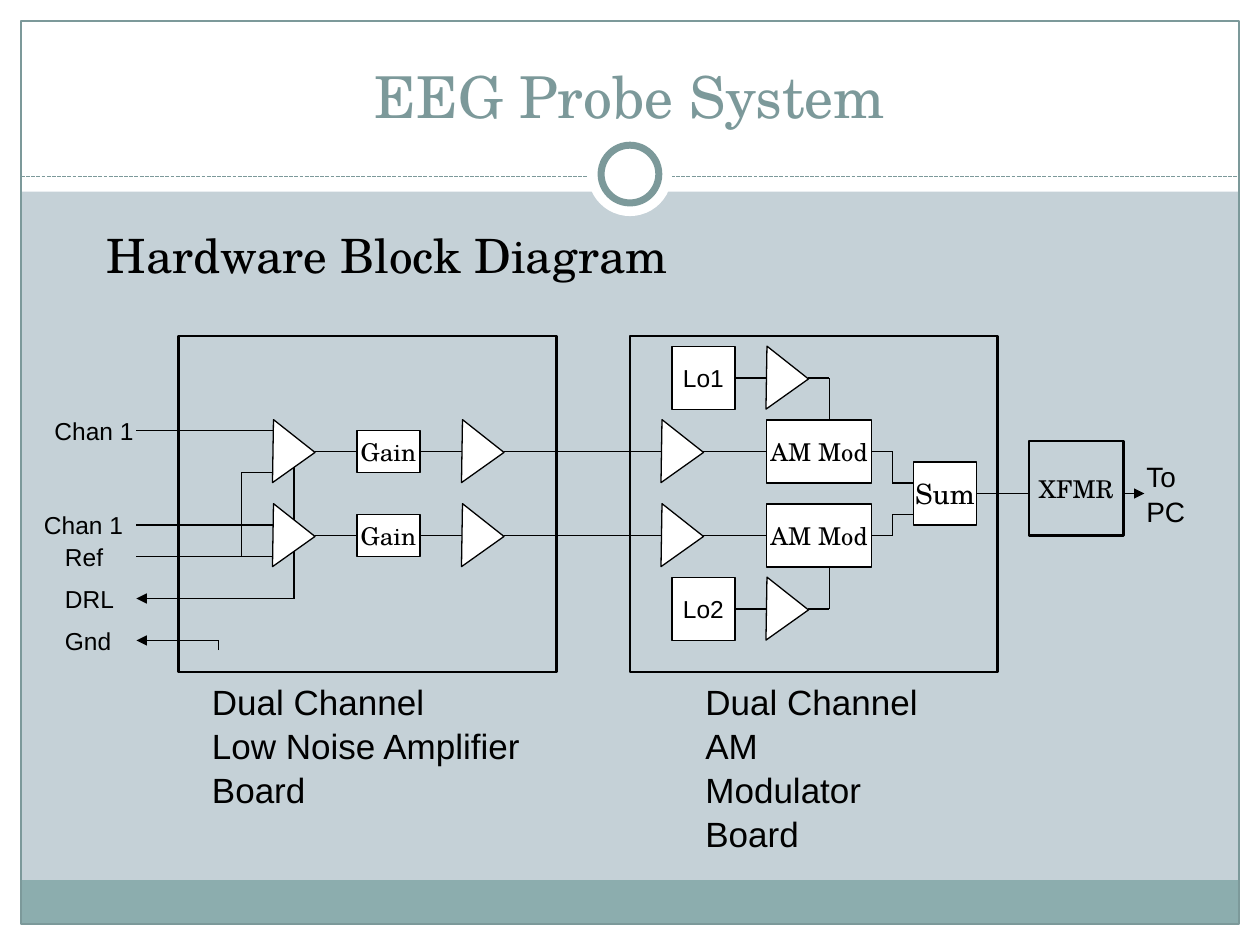
from itertools import pairwise

from lxml import etree
from pptx import Presentation
from pptx.dml.color import RGBColor
from pptx.enum.dml import MSO_LINE
from pptx.enum.shapes import MSO_CONNECTOR, MSO_SHAPE
from pptx.enum.text import MSO_ANCHOR, PP_ALIGN
from pptx.oxml.ns import qn
from pptx.util import Pt

RECTANGLE, OVAL, TRIANGLE = MSO_SHAPE.RECTANGLE, MSO_SHAPE.OVAL, MSO_SHAPE.ISOSCELES_TRIANGLE
STRAIGHT, DASH = MSO_CONNECTOR.STRAIGHT, MSO_LINE.SQUARE_DOT
TOP, MIDDLE, BOTTOM = MSO_ANCHOR.TOP, MSO_ANCHOR.MIDDLE, MSO_ANCHOR.BOTTOM
LEFT, CENTER = PP_ALIGN.LEFT, PP_ALIGN.CENTER
LEFT_SIDE, RIGHT_SIDE = 1, 3
SERIF, SANS = "TeX Gyre Schola", "Arial"
COLORS = {
    "background": "C5D1D7",
    "white": "FFFFFF",
    "black": "000000",
    "footer": "8CADAE",
    "accent": "7C999A",
    "bullet": "D16349",
}
CHANNEL_ROWS = (258, 306)


def color(name):
    """Return the named colour."""
    return RGBColor.from_string(COLORS[name])


def add_block(slide, kind, box, fill=None, line=None, width=0.75):
    """Add a preset shape with an optional fill and outline."""
    shape = slide.shapes.add_shape(kind, *map(Pt, box))
    shape.shadow.inherit = False
    if fill:
        shape.fill.solid()
        shape.fill.fore_color.rgb = color(fill)
    else:
        shape.fill.background()
    if line:
        shape.line.color.rgb = color(line)
        shape.line.width = Pt(width)
    else:
        shape.line.fill.background()
    return shape


def write(shape, lines, size, font, ink="black", align=CENTER, anchor=MIDDLE, wrap=False):
    """Fill a shape with one paragraph for each line."""
    frame = shape.text_frame
    frame.word_wrap = wrap
    frame.vertical_anchor = anchor
    frame.text = "\n".join(lines)
    for paragraph in frame.paragraphs:
        paragraph.alignment = align
        paragraph.font.size = Pt(size)
        paragraph.font.name = font
        paragraph.font.color.rgb = color(ink)
    return frame


def add_labelled(slide, box, label, size=14, font=SERIF, fill="white", width=0.75):
    """Add an outlined rectangle with a centred label."""
    shape = add_block(slide, RECTANGLE, box, fill, "black", width)
    write(shape, [label], size, font)
    return shape


def add_caption(slide, box, lines, size, spacing=None):
    """Add a left-aligned caption."""
    text_box = slide.shapes.add_textbox(*map(Pt, box))
    frame = write(text_box, lines, size, SANS, align=LEFT, anchor=TOP, wrap=True)
    frame.margin_right = 0
    for paragraph in frame.paragraphs:
        paragraph.line_spacing = spacing


def add_amplifier(slide, center_x, center_y):
    """Add a triangle pointing right around a centre."""
    shape = add_block(slide, TRIANGLE, (center_x - 18, center_y - 12, 36, 24), "white", "black")
    shape.adjustments[0] = 0.51
    shape.rotation = 90.9


def add_line(slide, start, end, ink="black"):
    """Add a thin straight connector."""
    line = slide.shapes.add_connector(STRAIGHT, *map(Pt, (*start, *end)))
    line.line.color.rgb = color(ink)
    line.line.width = Pt(0.75)
    etree.SubElement(line._element.spPr, qn("a:effectLst"))
    return line


def add_wire(slide, *points, begin=None, end=None, arrow=False):
    """Run connectors through the points and join the ends to blocks."""
    lines = [add_line(slide, first, second) for first, second in pairwise(points)]
    if begin:
        lines[0].begin_connect(begin, RIGHT_SIDE)
    if end:
        lines[-1].end_connect(end, LEFT_SIDE)
    if arrow:
        outline = lines[-1].line._get_or_add_ln()
        etree.SubElement(outline, qn("a:tailEnd"), type="triangle")


def add_frame(slide):
    """Draw the margins, header, footer band and ring."""
    for box in ((0, 528, 720, 12), (0, 0, 720, 109.5), (0, 0, 12, 540), (708, 0, 12, 540)):
        add_block(slide, RECTANGLE, box, "white")
    add_block(slide, RECTANGLE, (12, 503, 696, 25), "footer")
    add_block(slide, RECTANGLE, (12, 12, 696, 516), line="accent")
    add_line(slide, (12, 100.8), (708, 100.8), "accent").line.dash_style = DASH
    add_block(slide, OVAL, (336, 75.5, 48, 48), "white")
    add_block(slide, OVAL, (343.5, 83, 33, 33), "white", "accent", 4)


def add_headings(slide):
    """Write the title and the bulleted heading."""
    title = slide.shapes.add_textbox(*map(Pt, (24, 18, 672, 60)))
    write(title, ["EEG Probe System"], 33, SERIF, "accent", anchor=BOTTOM, wrap=True)
    heading = slide.shapes.add_textbox(*map(Pt, (54, 126, 612, 48)))
    properties = heading.text_frame.paragraphs[0]._p.get_or_add_pPr()
    properties.set("marL", str(Pt(21.6)))
    properties.set("indent", str(Pt(-21.6)))
    bullet_color = etree.SubElement(properties, qn("a:buClr"))
    etree.SubElement(bullet_color, qn("a:srgbClr"), val=COLORS["bullet"])
    etree.SubElement(properties, qn("a:buSzPct"), val="85000")
    etree.SubElement(properties, qn("a:buChar"), char="●")
    write(heading, ["Hardware Block Diagram"], 27, SERIF, align=LEFT, anchor=TOP, wrap=True)


def add_amplifier_board(slide):
    """Draw the low noise amplifier board and its inputs."""
    add_block(slide, RECTANGLE, (102, 192, 216, 192), line="black", width=1.5)
    for row in CHANNEL_ROWS:
        for center_x in (168, 276):
            add_amplifier(slide, center_x, row)
        add_wire(slide, (180, row), (264, row))
        add_labelled(slide, (204, row - 12, 36, 24), "Gain")
    for row in (246, 300, 318):
        add_wire(slide, (78, row), (156, row))
    add_wire(slide, (138, 318), (138, 270), (156, 270))
    add_wire(slide, (168, 267), (168, 297))
    add_wire(slide, (168, 315), (168, 342), (78, 342), arrow=True)
    add_wire(slide, (125, 371.5), (125, 366), (78, 366), arrow=True)
    for left, top, label in ((24, 234, "Chan 1"), (18, 288, "Chan 1"), (30, 306, "Ref"),
                             (30, 330, "DRL"), (30, 354, "Gnd")):
        add_caption(slide, (left, top, 60, 24), [label], 14)
    add_caption(slide, (114, 384, 192, 79), ["Dual Channel", "Low Noise Amplifier", "Board"], 20, 1.05)


def add_modulator_board(slide):
    """Draw the modulator board, the transformer and the output."""
    add_block(slide, RECTANGLE, (360, 192, 210, 192), line="black", width=1.5)
    transformer = (588, 252, 54, 54)
    add_labelled(slide, transformer, "XFMR", fill=None, width=1.5)
    summer = add_labelled(slide, (522, 264, 36, 36), "Sum", 16)
    channels = zip(CHANNEL_ROWS, ("Lo1", "Lo2"), (216, 348), (240, 324), (276, 294))
    for row, name, oscillator_row, modulator_edge, sum_row in channels:
        oscillator = add_labelled(slide, (384, oscillator_row - 18, 36, 36), name, font=SANS)
        modulator = add_labelled(slide, (438, row - 18, 60, 36), "AM Mod")
        add_amplifier(slide, 390, row)
        add_amplifier(slide, 450, oscillator_row)
        add_wire(slide, (288, row), (378, row))
        add_wire(slide, (402, row), (438, row), end=modulator)
        add_wire(slide, (420, oscillator_row), (438, oscillator_row), begin=oscillator)
        add_wire(slide, (462, oscillator_row), (474, oscillator_row), (474, modulator_edge))
        add_wire(slide, (498, row), (510, row), (510, sum_row), (522, sum_row), begin=modulator)
    add_wire(slide, (558, 282), (588, 282), begin=summer)
    add_wire(slide, (642, 282), (654, 282), arrow=True)
    add_caption(slide, (648, 258, 40, 46), ["To", "PC"], 16, 1.05)
    add_caption(slide, (396, 384, 130, 103), ["Dual Channel", "AM Modulator", "Board"], 20, 1.05)


def main():
    """Build and save the slide."""
    presentation = Presentation()
    presentation.slide_width, presentation.slide_height = Pt(720), Pt(540)
    slide = presentation.slides.add_slide(presentation.slide_layouts[6])
    slide.background.fill.solid()
    slide.background.fill.fore_color.rgb = color("background")
    add_frame(slide)
    add_headings(slide)
    add_amplifier_board(slide)
    add_modulator_board(slide)
    presentation.save("out.pptx")


if __name__ == "__main__":
    main()
